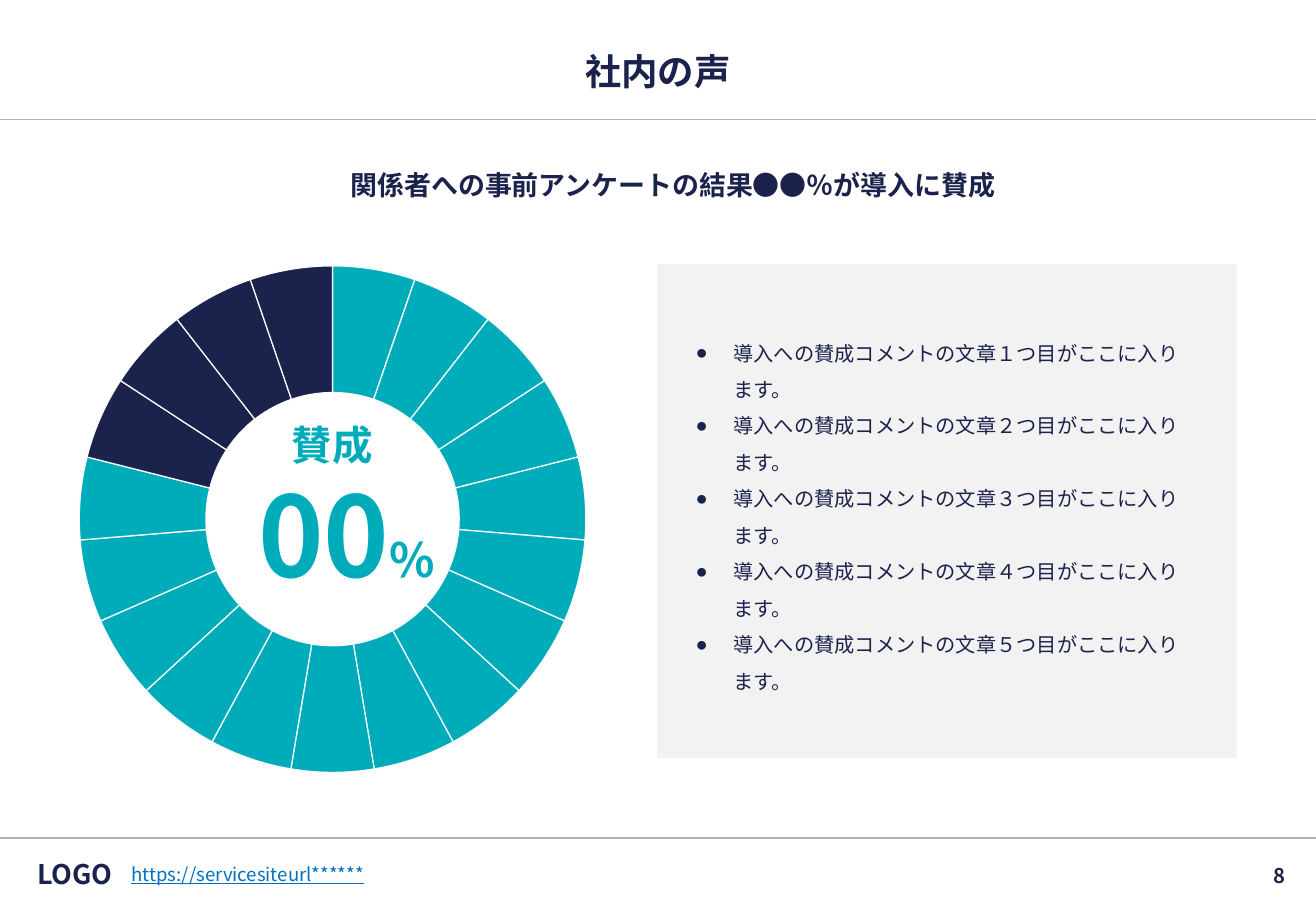
from dataclasses import dataclass
from lxml.etree import SubElement
from pptx import Presentation
from pptx.chart.data import CategoryChartData
from pptx.dml.color import RGBColor
from pptx.enum.chart import XL_CHART_TYPE
from pptx.enum.shapes import MSO_CONNECTOR, MSO_SHAPE
from pptx.enum.text import MSO_ANCHOR, PP_ALIGN
from pptx.oxml import parse_xml
from pptx.oxml.ns import nsdecls, qn
from pptx.util import Pt

TITLE = "社内の声"
LEAD = "関係者への事前アンケートの結果●●％が導入に賛成"
COMMENTS = [f"導入への賛成コメントの文章{n}つ目がここに入ります。" for n in "１２３４５"]
LABEL, SHARE, UNIT = "賛成", "00", "%"
LOGO, URL, PAGE = "LOGO", "https://servicesiteurl******", "8"
SLICES, AGREE, VALUE = 19, 15, 5

WIDTH, HEIGHT = 780, 540
MARGIN = 46.8
INNER = WIDTH - 2 * MARGIN
RULES = (70.7, 496.8)
PLOT = {"x": 0.216, "y": 0.169, "w": 0.569, "h": 0.767}
THIN = (3, 3, 3, 3)


@dataclass(frozen=True)
class Theme:
    font: str = "Noto Sans CJK JP"
    dot: str = "Arial"
    navy: str = "1B224C"
    teal: str = "00ACBA"
    blue: str = "0070C0"
    panel: str = "F2F2F2"
    rule: str = "AFAFAF"
    gap: str = "FCFCFC"
    title: float = 21.6
    lead: float = 16
    body: float = 12
    url: float = 11
    chart: float = 10
    label: float = 24
    share: float = 66
    unit: float = 28


T = Theme()


def rgb(code):
    return RGBColor.from_string(code)


def add_run(para, text, size, color=T.navy, bold=False, under=False):
    run = para.add_run()
    run.text = text
    font = run.font
    font.size, font.bold = Pt(size), bold
    if under:
        font.underline = True
    font.color.rgb = rgb(color)
    font.name = T.font
    SubElement(run._r.rPr, qn("a:ea"), typeface=T.font)


def set_frame(frame, pads, anchor):
    frame.word_wrap = True
    frame.vertical_anchor = anchor
    (frame.margin_left, frame.margin_top,
     frame.margin_right, frame.margin_bottom) = map(Pt, pads)


def indent(para, left, first):
    props = para._p.get_or_add_pPr()
    props.set("marL", str(Pt(left)))
    props.set("indent", str(Pt(first)))
    return props


def add_text(slide, box, runs, align=PP_ALIGN.CENTER, anchor=MSO_ANCHOR.TOP, pads=THIN):
    """Add a one-paragraph text box; each run is the arguments of add_run."""
    frame = slide.shapes.add_textbox(*map(Pt, box)).text_frame
    set_frame(frame, pads, anchor)
    para = frame.paragraphs[0]
    para.alignment = align
    for run in runs:
        add_run(para, *run)
    return para


def add_rule(slide, y):
    line = slide.shapes.add_connector(MSO_CONNECTOR.STRAIGHT, 0, Pt(y), Pt(WIDTH), Pt(y))
    line.line.color.rgb = rgb(T.rule)
    line.line.width = Pt(0.75)
    SubElement(line._element.spPr, qn("a:effectLst"))


def add_title(slide):
    title = slide.shapes.title
    title.left, title.top, title.width, title.height = map(Pt, (MARGIN, 28, INNER, 28))
    set_frame(title.text_frame, (3, 6, 3, 3), MSO_ANCHOR.MIDDLE)
    para = title.text_frame.paragraphs[0]
    para.alignment, para.line_spacing = PP_ALIGN.CENTER, 0.9
    add_run(para, TITLE, T.title, T.navy, True)


def add_ring(slide):
    data = CategoryChartData()
    data.categories = [str(n + 1) for n in range(SLICES)]
    data.add_series("Series 1", [VALUE] * SLICES)
    chart = slide.shapes.add_chart(
        XL_CHART_TYPE.DOUGHNUT, *map(Pt, (-67, 91.4, 527.8, 391.7)), data).chart
    chart.has_legend = chart.has_title = False
    chart.font.name, chart.font.size = T.font, Pt(T.chart)
    chart.font.color.rgb = rgb(T.navy)
    plot = chart.plots[0]
    plot.vary_by_categories = False
    plot._element.find(qn("c:holeSize")).set("val", "75")
    for n in range(SLICES):
        form = plot.series[0].points[n].format
        form.fill.solid()
        form.fill.fore_color.rgb = rgb(T.teal if n < AGREE else T.navy)
        form.line.color.rgb = rgb(T.gap)
        form.line.width = Pt(0.75)
    area = chart._chartSpace.chart.plotArea
    for old in area.findall(qn("c:layout")):
        area.remove(old)
    sizes = "".join(f'<c:{k} val="{v}"/>' for k, v in PLOT.items())
    area.insert(0, parse_xml(
        f'<c:layout {nsdecls("c")}><c:manualLayout><c:layoutTarget val="inner"/>'
        f'<c:xMode val="edge"/><c:yMode val="edge"/>{sizes}</c:manualLayout></c:layout>'))


def add_panel(slide):
    panel = slide.shapes.add_shape(
        MSO_SHAPE.RECTANGLE, *map(Pt, (390, 157, 342.7, 291.6)))
    panel.shadow.inherit = False
    panel.fill.solid()
    panel.fill.fore_color.rgb = rgb(T.panel)
    panel.line.color.rgb = rgb(T.panel)
    panel.line.width = Pt(1)
    frame = panel.text_frame
    set_frame(frame, (22.3, 17.3, 22.3, 17.3), MSO_ANCHOR.MIDDLE)
    for n, text in enumerate(COMMENTS):
        para = frame.add_paragraph() if n else frame.paragraphs[0]
        para.alignment, para.line_spacing = PP_ALIGN.LEFT, 1.5
        props = indent(para, 22.5, -22.5)
        tint = SubElement(props, qn("a:buClr"))
        SubElement(tint, qn("a:srgbClr"), val=T.navy)
        SubElement(props, qn("a:buFont"), typeface=T.dot)
        SubElement(props, qn("a:buChar"), char="●")
        add_run(para, text, T.body)


def main():
    deck = Presentation()
    deck.slide_width, deck.slide_height = Pt(WIDTH), Pt(HEIGHT)
    slide = deck.slides.add_slide(deck.slide_layouts[5])
    for y in RULES:
        add_rule(slide, y)
    add_title(slide)
    lead = add_text(slide, (MARGIN, 91.4, INNER, 45.4), [(LEAD, T.lead, T.navy, True)])
    lead.line_spacing = 1.3
    indent(lead, 36, -18)
    add_ring(slide)
    add_text(slide, (105, 273.6, 201, 85.7),
             [(SHARE, T.share, T.teal, True), (UNIT, T.unit, T.teal, True)])
    add_text(slide, (75.6, 246.2, 242.6, 34.6), [(LABEL, T.label, T.teal, True)])
    add_panel(slide)
    add_text(slide, (15, 504, 59, 28), [(LOGO, T.lead, T.navy, True)],
             anchor=MSO_ANCHOR.MIDDLE)
    add_text(slide, (74.9, 508.3, 414, 18.7), [(URL, T.url, T.blue, False, True)],
             PP_ALIGN.LEFT)
    add_text(slide, (593.3, 504.7, 175.7, 28), [(PAGE, T.body, T.navy, True)],
             PP_ALIGN.RIGHT, MSO_ANCHOR.MIDDLE, (7.2, 3.6, 7.2, 3.6))
    deck.save("out.pptx")


if __name__ == "__main__":
    main()
